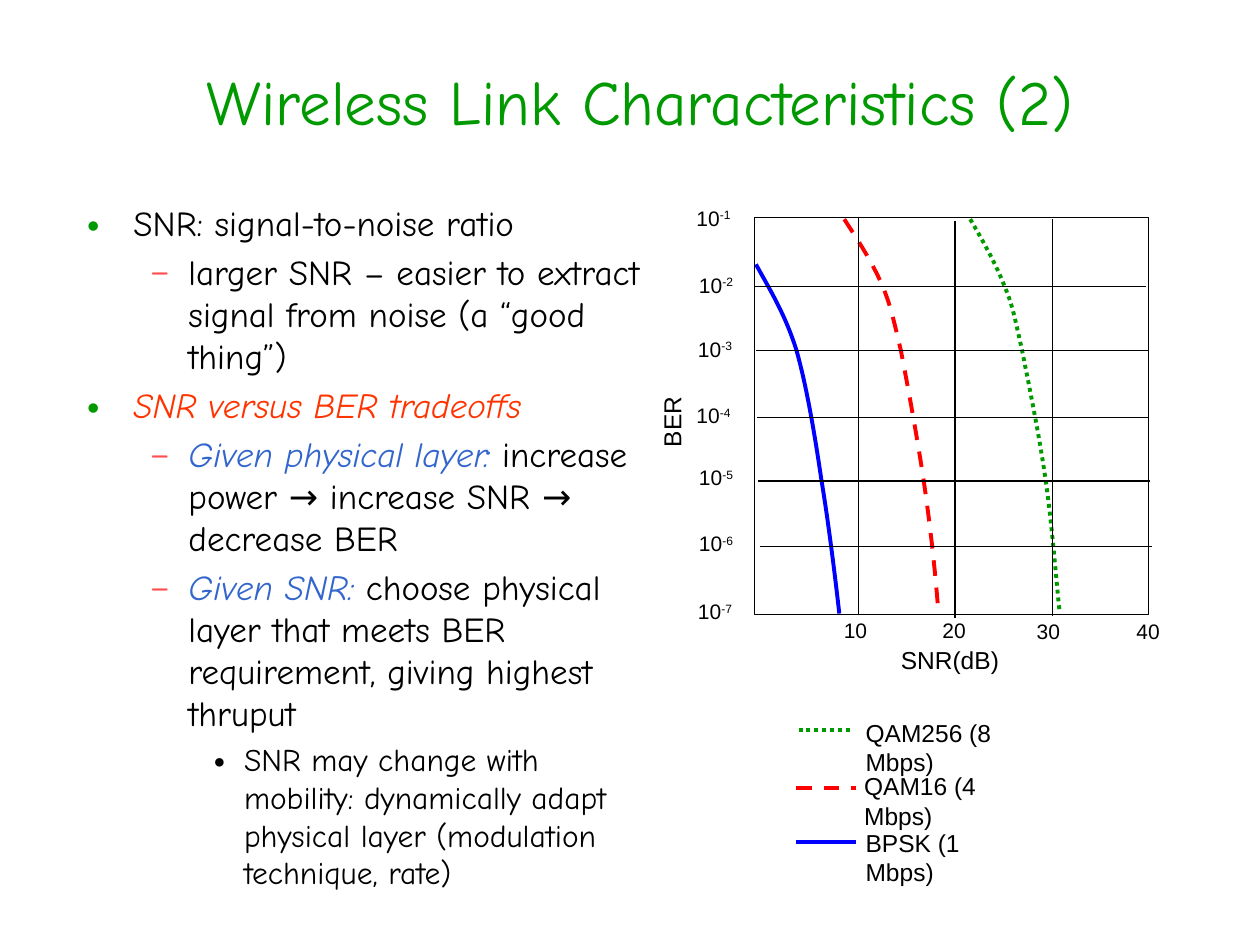
"""Build a slide on SNR versus BER for wireless links."""
from lxml.etree import SubElement
from pptx import Presentation
from pptx.dml.color import RGBColor
from pptx.enum.dml import MSO_LINE
from pptx.enum.shapes import MSO_CONNECTOR, MSO_SHAPE
from pptx.enum.text import MSO_ANCHOR, PP_ALIGN
from pptx.oxml.ns import qn
from pptx.util import Cm, Pt

COLORS = {"green": "009900", "black": "000000", "coral": "FF5050", "orange": "FF3300",
          "steel": "3366CC", "blue": "0000FF", "red": "FF0000"}
TITLE = "Wireless Link Characteristics (2)"
BODY = [
    (0, [("SNR: signal-to-noise ratio", None)]),
    (1, [("larger SNR – easier to extract signal from noise (a “good thing”)", None)]),
    (0, [("SNR versus BER tradeoffs", "orange")]),
    (1, [("Given physical layer:", "steel"),
         (" increase power → increase SNR → decrease BER", None)]),
    (1, [("Given SNR:", "steel"),
         (" choose physical layer that meets BER requirement, giving highest thruput", None)]),
    (2, [("SNR may change with mobility: dynamically adapt physical layer "
          "(modulation technique, rate)", None)]),
]
LEVELS = [
    dict(size=20, indent=0.38, hang=0.38, char="•", color="green", scale=150),
    dict(size=20, indent=0.82, hang=0.31, char="–", color="coral", scale=100),
    dict(size=18, indent=1.26, hang=0.25, char="•", color="black", scale=150),
]
CURVES = [
    ("blue", None, [(6, 2.1), (6.11, 2.3), (6.23, 2.49), (6.32, 2.77), (6.4, 3.06),
                    (6.47, 3.46), (6.52, 3.81), (6.58, 4.16), (6.64, 4.69), (6.66, 4.87)]),
    ("red", MSO_LINE.DASH, [(6.7, 1.74), (6.81, 1.91), (6.92, 2.08), (7, 2.26), (7.07, 2.43),
                            (7.09, 2.53), (7.15, 2.78), (7.2, 3.04), (7.28, 3.47),
                            (7.33, 3.81), (7.38, 4.16), (7.42, 4.51), (7.45, 4.87)]),
    ("green", MSO_LINE.ROUND_DOT, [(7.7, 1.74), (7.8, 1.91), (7.9, 2.09), (7.97, 2.26),
                                   (8.04, 2.43), (8.05, 2.51), (8.11, 2.77), (8.16, 3.03),
                                   (8.25, 3.47), (8.3, 3.81), (8.35, 4.16), (8.39, 4.68),
                                   (8.41, 4.85)]),
]
LEGEND = [("QAM256 (8 Mbps)", "green", MSO_LINE.ROUND_DOT, (6.77, 5.65), (6.34, 6.77, 5.79)),
          ("QAM16 (4 Mbps)", "red", MSO_LINE.DASH, (6.76, 6.07), (6.32, 6.79, 6.25)),
          ("BPSK (1 Mbps)", "blue", None, (6.77, 6.52), (6.32, 6.79, 6.68))]
PLOT = (5.99, 1.73, 3.13, 3.15)
ROWS = [2.27, 2.78, 3.31, 3.82, 4.34]
COLUMNS = [(6.81, 1.73), (7.58, 1.75), (8.35, 1.74)]
X_TICKS = [("10", 6.6, 4.85), ("20", 7.38, 4.85), ("30", 8.13, 4.86), ("40", 8.92, 4.86)]
Y_TICKS = [(5.43, 1.58), (5.45, 2.11), (5.44, 2.62), (5.43, 3.15),
           (5.45, 3.64), (5.45, 4.16), (5.44, 4.7)]

prs = Presentation()


def inch(v):
    return Cm(round(v * 2.54, 2))


prs.slide_width, prs.slide_height = inch(10), inch(7.5)
s = prs.slides.add_slide(prs.slide_layouts[6])


def add_run(p, text, size=12, font="Arial", color="black", italic=False, raised=False):
    r = p.add_run()
    r.text = text
    r.font.size, r.font.name, r.font.italic = Pt(size), font, italic
    r.font.color.rgb = RGBColor.from_string(COLORS[color])
    if raised:
        r.font._element.set("baseline", "30000")


def add_box(x, y, w, h, wrap=False):
    sp = s.shapes.add_textbox(inch(x), inch(y), inch(w), inch(h))
    sp.text_frame.word_wrap = wrap
    return sp


def add_label(text, x, y, w, h=0.3, wrap=False, power="", **fmt):
    sp = add_box(x, y, w, h, wrap)
    p = sp.text_frame.paragraphs[0]
    add_run(p, text, **fmt)
    if power:
        add_run(p, power, raised=True, **fmt)
    return sp


def style_line(line, color="black", width=0.75, dash=None):
    line.color.rgb = RGBColor.from_string(COLORS[color])
    line.width = Pt(width)
    if dash:
        line.dash_style = dash


def add_line(x1, y1, x2, y2, **fmt):
    c = s.shapes.add_connector(MSO_CONNECTOR.STRAIGHT, inch(x1), inch(y1), inch(x2), inch(y2))
    style_line(c.line, **fmt)
    SubElement(c._element.spPr, qn("a:effectLst"))


def add_curve(color, dash, points):
    track = [(inch(x), inch(y)) for x, y in points]
    builder = s.shapes.build_freeform(*track[0])
    builder.add_line_segments(track[1:], close=False)
    sp = builder.convert_to_shape()
    outline = next(sp._element.iter(qn("a:path")))
    segments = outline.findall(qn("a:lnTo"))
    for i in range(0, len(segments), 3):
        bend = SubElement(outline, qn("a:cubicBezTo"))
        for segment in segments[i:i + 3]:
            bend.append(segment[0])
            outline.remove(segment)
    sp.shadow.inherit = False
    sp.fill.background()
    style_line(sp.line, color, 2.25, dash)


def add_bullet(p, level):
    pPr = p._p.get_or_add_pPr()
    pPr.set("marL", str(inch(level["indent"])))
    pPr.set("indent", str(-inch(level["hang"])))
    SubElement(SubElement(pPr, qn("a:buClr")), qn("a:srgbClr"), val=COLORS[level["color"]])
    SubElement(pPr, qn("a:buSzPct"), val=str(level["scale"] * 1000))
    SubElement(pPr, qn("a:buFont"), typeface="Comic Neue")
    SubElement(pPr, qn("a:buChar"), char=level["char"])


def add_body():
    tf = add_box(0.58, 1.55, 4.68, 5.68, wrap=True).text_frame
    for i, (depth, runs) in enumerate(BODY):
        p = tf.add_paragraph() if i else tf.paragraphs[0]
        level = LEVELS[depth]
        p.level = depth
        add_bullet(p, level)
        if i:
            p.space_before = Pt(level["size"] * 0.2)
        for text, accent in runs:
            add_run(p, text, size=level["size"], font="Comic Neue",
                    color=accent or "black", italic=bool(accent))


def add_plot():
    for curve in CURVES:
        add_curve(*curve)
    sp = s.shapes.add_shape(MSO_SHAPE.RECTANGLE, *map(inch, PLOT))
    sp.shadow.inherit = False
    sp.fill.background()
    style_line(sp.line)
    for i, row in enumerate(ROWS):
        left = PLOT[0] + i * 0.01
        add_line(left, row, left + 3.11, row)
    for column, top in COLUMNS:
        add_line(column, top, column, top + PLOT[3])
    for text, left, top in X_TICKS:
        add_label(text, left, top, 0.39)
    for n, (left, top) in enumerate(Y_TICKS, 1):
        add_label("10", left, top, 0.48, power=f"-{n}")
    add_label("SNR(dB)", 7.05, 5.07, 0.98, 0.33, size=14)
    add_label("BER", 5.03, 3.18, 0.6, 0.33, size=14).rotation = 270


title = add_label(TITLE, 0.83, 0.17, 8.5, 1.25, wrap=True, size=36, font="Comic Neue", color="green")
title.text_frame.vertical_anchor = MSO_ANCHOR.MIDDLE
title.text_frame.paragraphs[0].alignment = PP_ALIGN.CENTER
add_body()
add_plot()
for text, color, dash, (left, top), (start, end, middle) in LEGEND:
    add_line(start, middle, end, middle, color=color, width=2.25, dash=dash)
    add_label(text, left, top, 1.25, 0.33, wrap=True, size=14)
prs.save("out.pptx")
